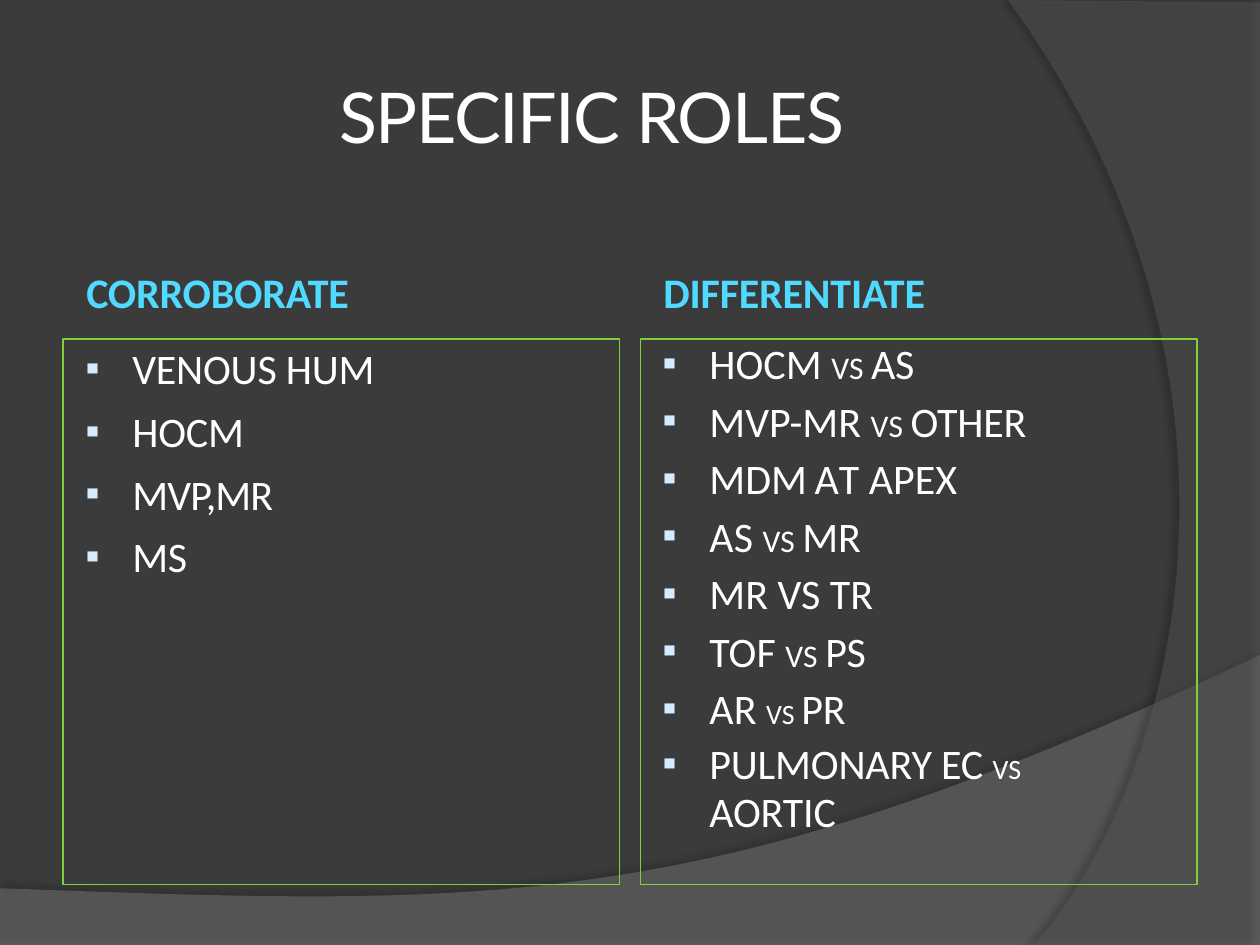
from dataclasses import dataclass

from lxml.etree import SubElement
from pptx import Presentation
from pptx.dml.color import RGBColor
from pptx.enum.shapes import MSO_SHAPE
from pptx.enum.text import MSO_ANCHOR, PP_ALIGN
from pptx.oxml.ns import qn
from pptx.util import Pt

WHITE, CYAN, GREEN, PALE_BLUE = "FFFFFF", "51DAFF", "7ED13A", "D5EBFF"
Point = tuple[float, float]


@dataclass
class Span:
    text: str
    size: float = 24
    spacing: float = -0.1


@dataclass
class Item:
    spans: list[Span]
    before: float = 4.1
    line: float | None = None
    bullet: bool = True


@dataclass
class Column:
    left: float
    heading: str
    items: list[Item]
    top_inset: float


@dataclass
class Swoosh:
    start: Point
    corners: list[Point]
    controls: tuple[Point, Point]
    end: Point
    color: str
    opacity: int
    shadow_opacity: int
    shadow_distance: float
    shadow_angle: int


def rgb(color: str) -> RGBColor:
    return RGBColor.from_string(color)


def versus(first: str, second: str, size: float = 18, before: float = 4.1,
           line: float | None = None) -> Item:
    return Item([Span(first + " ", spacing=0), Span("VS ", size, 0.1), Span(second)], before, line)


def curve(start: Point, controls: tuple[Point, Point], end: Point, steps: int = 60) -> list[Point]:
    """Sample a cubic Bezier curve as short segments."""
    points = (start, *controls, end)
    weights = (1, 3, 3, 1)
    return [
        tuple(
            sum(w * (1 - t) ** (3 - k) * t ** k * p[axis]
                for k, (w, p) in enumerate(zip(weights, points)))
            for axis in (0, 1)
        )
        for t in (step / steps for step in range(1, steps + 1))
    ]


def draw_swoosh(slide, swoosh: Swoosh) -> None:
    outline = swoosh.corners + curve(swoosh.corners[-1], swoosh.controls, swoosh.end)
    builder = slide.shapes.build_freeform(*map(Pt, swoosh.start))
    builder.add_line_segments([(Pt(x), Pt(y)) for x, y in outline], close=True)
    shape = builder.convert_to_shape()
    shape.fill.solid()
    shape.fill.fore_color.rgb = rgb(swoosh.color)
    shape.line.fill.background()
    shape.shadow.inherit = False
    properties = shape._element.spPr
    fill_color = properties.find(qn("a:solidFill")).find(qn("a:srgbClr"))
    SubElement(fill_color, qn("a:alpha"), val=str(swoosh.opacity * 1000))
    shadow = SubElement(
        properties.find(qn("a:effectLst")), qn("a:outerShdw"), blurRad=str(Pt(4)),
        dist=str(Pt(swoosh.shadow_distance)), dir=str(swoosh.shadow_angle * 60000),
        algn="ctr", rotWithShape="0")
    shadow_color = SubElement(shadow, qn("a:srgbClr"), val="000000")
    SubElement(shadow_color, qn("a:alpha"), val=str(swoosh.shadow_opacity * 1000))


def set_insets(frame, top: float) -> None:
    frame.word_wrap = True
    frame.margin_left = frame.margin_right = frame.margin_bottom = 0
    frame.margin_top = Pt(top)


def add_span(paragraph, span: Span, font: str, color: str, bold: bool = False) -> None:
    run = paragraph.add_run()
    run.text = span.text
    run.font.name = font
    run.font.size = Pt(span.size)
    run.font.bold = bold
    run.font.color.rgb = rgb(color)
    run.font._element.set("spc", str(round(span.spacing * 100)))


def draw_label(slide, left: float, top: float, width: float, height: float,
               spans: list[Span], font: str, color: str, bold: bool = False):
    frame = slide.shapes.add_textbox(Pt(left), Pt(top), Pt(width), Pt(height)).text_frame
    set_insets(frame, 1)
    paragraph = frame.paragraphs[0]
    paragraph.space_before = Pt(1)
    paragraph._p.get_or_add_pPr().set("marL", str(Pt(1)))
    for span in spans:
        add_span(paragraph, span, font, color, bold)
    return frame


def format_item(paragraph, item: Item) -> None:
    paragraph.alignment = PP_ALIGN.LEFT
    paragraph.space_before = Pt(item.before)
    if item.line:
        paragraph.line_spacing = Pt(item.line)
    properties = paragraph._p.get_or_add_pPr()
    properties.set("marL", str(Pt(39.6)))
    properties.set("indent", str(Pt(-26.7 if item.bullet else 0)))
    if item.bullet:
        SubElement(SubElement(properties, qn("a:buClr")), qn("a:srgbClr"), val=PALE_BLUE)
        SubElement(properties, qn("a:buSzPct"), val="94000")
        SubElement(properties, qn("a:buFont"), typeface="Calibri")
        SubElement(properties, qn("a:buChar"), char="▪")
    for span in item.spans:
        add_span(paragraph, span, "Calibri", WHITE)


def draw_column(slide, column: Column) -> None:
    draw_label(slide, column.left + 12.3, 151.2, 173, 31, [Span(column.heading)],
               "Calibri", CYAN, True)
    box = slide.shapes.add_shape(MSO_SHAPE.RECTANGLE, Pt(column.left), Pt(193.7),
                                 Pt(318.2), Pt(311.8))
    box.shadow.inherit = False
    box.fill.background()
    box.line.color.rgb = rgb(GREEN)
    box.line.width = Pt(0.75)
    frame = box.text_frame
    set_insets(frame, column.top_inset)
    frame.vertical_anchor = MSO_ANCHOR.TOP
    for index, item in enumerate(column.items):
        format_item(frame.add_paragraph() if index else frame.paragraphs[0], item)


def main() -> None:
    presentation = Presentation()
    presentation.slide_width, presentation.slide_height = Pt(720), Pt(540)
    slide = presentation.slides.add_slide(presentation.slide_layouts[6])
    slide.background.fill.solid()
    slide.background.fill.fore_color.rgb = rgb("3B3B3B")

    wave = Swoosh((0, 507.6), [(0, 540.5), (720, 540.5), (720, 374.4)],
                  ((402.5, 524.9), (281.5, 517.7)), (0, 507.6), "7F7F7F", 45, 35, 3.5, 270)
    arc = Swoosh((720, 1.4), [(720, 540), (591.1, 540)],
                 ((673.2, 445.7), (733, 216)), (576, 0), "5E5E5E", 40, 45, 4, 180)
    for swoosh in (wave, arc):
        draw_swoosh(slide, swoosh)

    title = draw_label(slide, 193, 40.3, 297.5, 50.4,
                       [Span("SPECIFIC ", 40, -0.9), Span("ROLES", 40, -0.8)], "Lato", WHITE)
    title.vertical_anchor = MSO_ANCHOR.MIDDLE

    corroborate = [Item([Span("VENOUS HUM")], 2.1), Item([Span("HOCM")], 7),
                   Item([Span("MVP,MR", spacing=-0.5)], 7), Item([Span("MS")], 7)]
    differentiate = [
        versus("HOCM", "AS", before=0, line=28),
        versus("MVP-MR", "OTHER"),
        Item([Span("MDM", spacing=0), Span(" A", spacing=-1.1), Span("T APEX", spacing=0)]),
        versus("AS", "MR"),
        Item([Span("MR VS TR", spacing=0)]),
        versus("TOF", "PS"),
        versus("AR", "PR", 16),
        Item([Span("PULMONARY EC "), Span("VS", 16, 0.1)], line=27.4),
        Item([Span("AORTIC")], 0, 27.4, False),
    ]
    for column in (Column(36, "CORROBORATE", corroborate, 2.2),
                   Column(365.8, "DIFFERENTIATE", differentiate, 0)):
        draw_column(slide, column)
    presentation.save("out.pptx")


if __name__ == "__main__":
    main()
